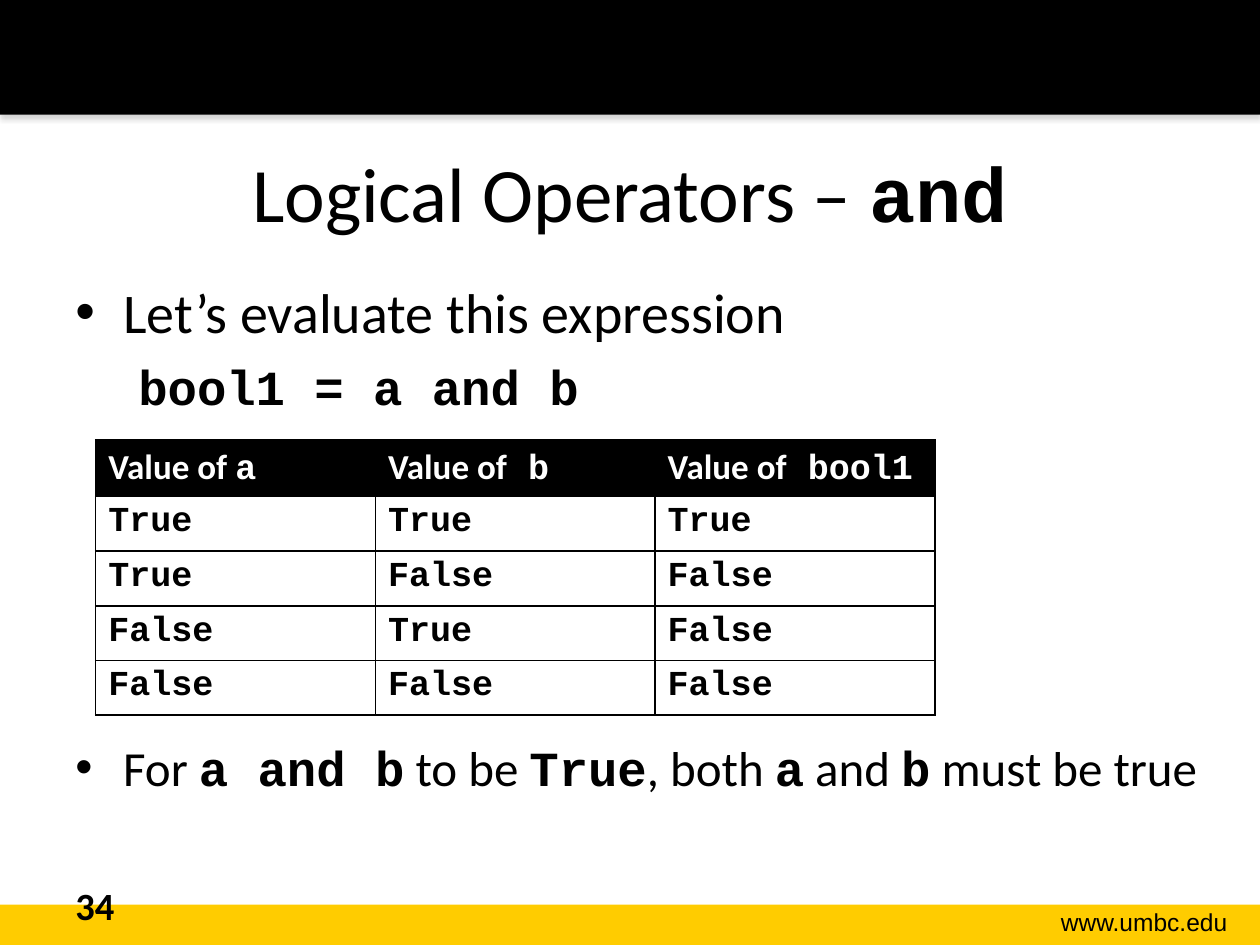
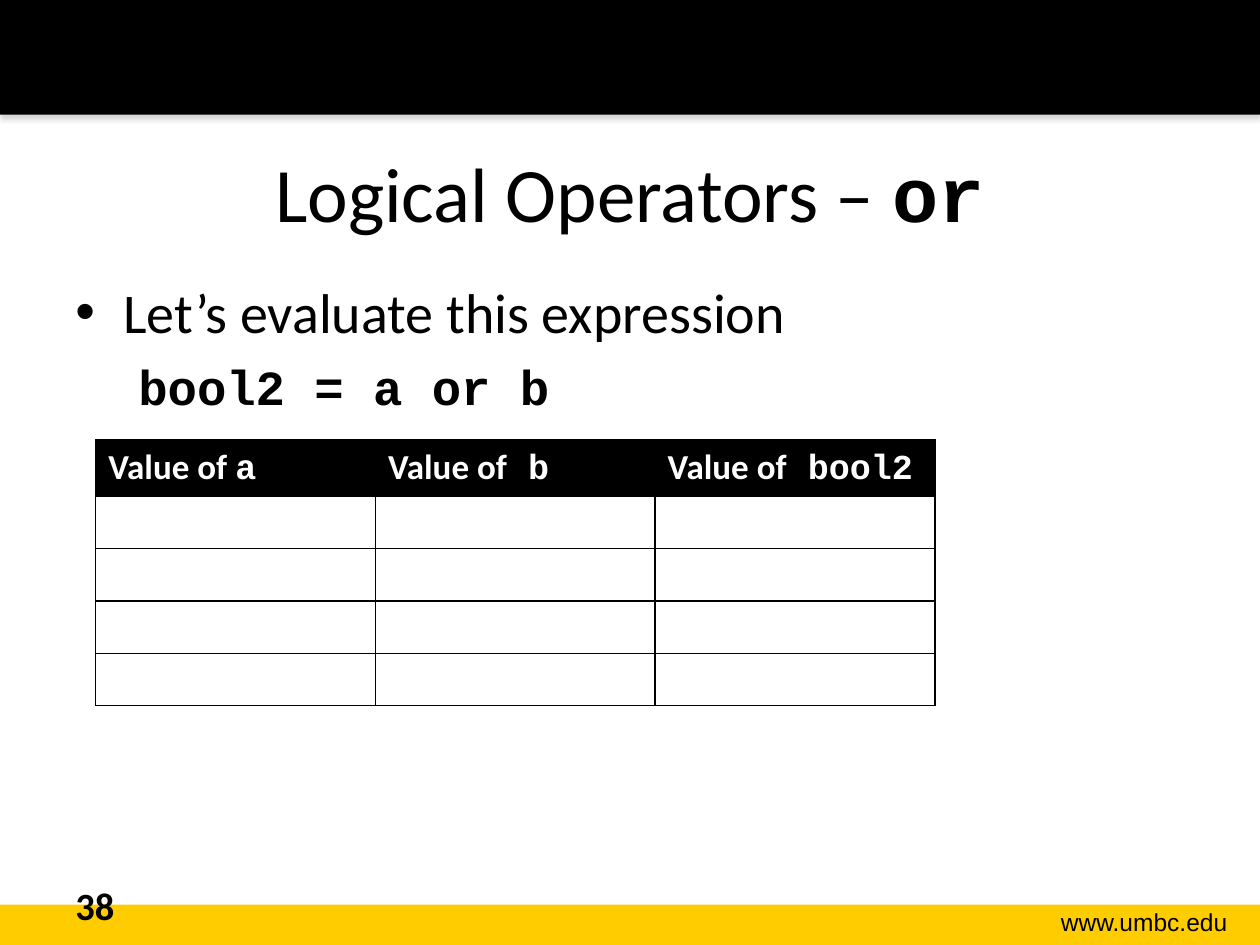
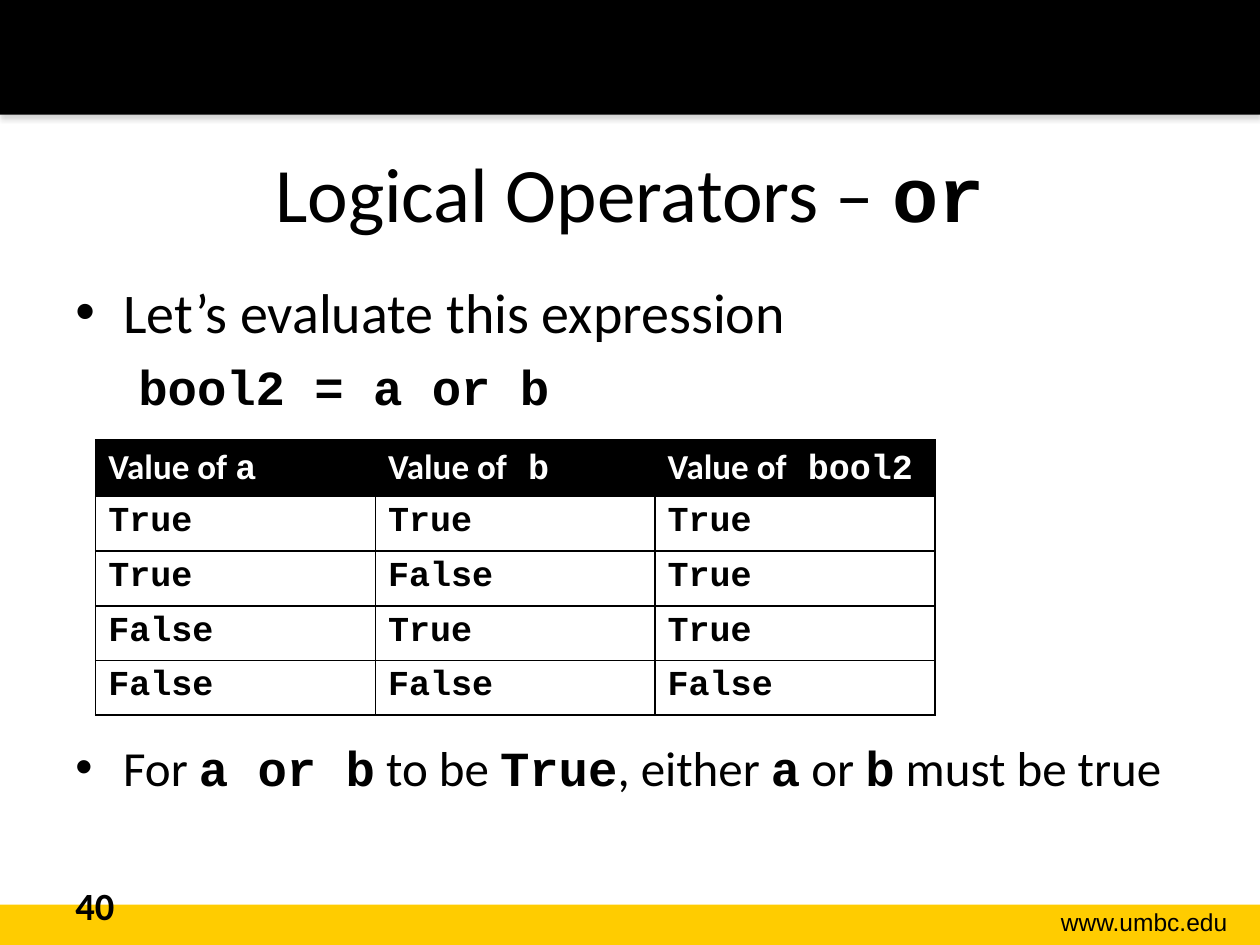
from itertools import product

from lxml import etree
from pptx import Presentation
from pptx import util as u
from pptx.dml.color import RGBColor
from pptx.enum import shapes, text
from pptx.oxml import parse_xml
from pptx.oxml.ns import nsdecls, qn

BLACK = RGBColor(0x00, 0x00, 0x00)
WHITE = RGBColor(0xFF, 0xFF, 0xFF)
GOLD = RGBColor(0xFF, 0xCC, 0x00)
SANS, MONO = "Calibri", "Courier New"
LEFT, RIGHT = text.PP_ALIGN.LEFT, text.PP_ALIGN.RIGHT
W, H = u.Inches(10), u.Inches(7.5)
EDGE = u.Inches(0.5)
COL, HEAD, ROW = u.Inches(2.22), u.Inches(0.45), u.Inches(1.66 / 4)

SHADOW = (
    f'<a:outerShdw {nsdecls("a")} blurRad="{u.Pt(3.1)}" dist="{u.Pt(1.8)}" dir="5400000" rotWithShape="0">'
    '<a:srgbClr val="808080"><a:alpha val="35000"/></a:srgbClr></a:outerShdw>'
)


def write(para, words, size=28, font=SANS, ink=BLACK, bold=False, align=LEFT,
          before=0, indent=0, bullet=False):
    props = para._p.get_or_add_pPr()
    if indent:
        props.set("marL", str(u.Inches(indent)))
    if bullet:
        props.set("indent", str(-u.Inches(indent)))
        etree.SubElement(props, qn("a:buFont")).set("typeface", "Arial")
        etree.SubElement(props, qn("a:buChar")).set("char", "•")
    para.alignment = align
    para.space_before = u.Pt(before)
    for place, part in enumerate(words.split("`")):
        if part:
            code = place % 2 == 1
            run = para.add_run()
            run.text = part
            run.font.name = MONO if code else font
            run.font.size = u.Pt(size)
            run.font.bold = bold or code
            run.font.color.rgb = ink


def box(slide, left, top, width, height):
    frame = slide.shapes.add_textbox(left, top, width, height).text_frame
    frame.word_wrap = True
    return frame


deck = Presentation()
deck.slide_width, deck.slide_height = W, H

pages = [
    ("34", "and", "bool1", ["True", "False", "False", "False"], "both `a` and `b`"),
    ("38", "or", "bool2", None, None),
    ("40", "or", "bool2", ["True", "True", "True", "False"], "either `a` or `b`"),
]

for number, word, name, results, rule in pages:
    slide = deck.slides.add_slide(deck.slide_layouts[5])

    for top, height, tint in [(u.Inches(7.18), u.Inches(0.32), GOLD), (0, u.Inches(0.91), BLACK)]:
        band = slide.shapes.add_shape(shapes.MSO_SHAPE.RECTANGLE, 0, top, W, height)
        band.shadow.inherit = False
        band.fill.solid()
        band.fill.fore_color.rgb = tint
        band.line.fill.background()
    band._element.spPr.find(qn("a:effectLst")).append(parse_xml(SHADOW))

    site = box(slide, u.Inches(7.85), u.Inches(7.15), u.Inches(1.99), u.Inches(0.34))
    write(site.paragraphs[0], "www.umbc.edu", size=14, font="Arial", align=RIGHT)

    title = slide.shapes.title
    title.left, title.top = EDGE, u.Inches(0.9)
    title.width, title.height = W - 2 * EDGE, u.Inches(1.25)
    title.text_frame.vertical_anchor = text.MSO_ANCHOR.MIDDLE
    write(title.text_frame.paragraphs[0], f"Logical Operators – `{word}`", size=44,
          align=text.PP_ALIGN.CENTER)

    body = box(slide, EDGE, u.Inches(2.15), u.Inches(9.2), u.Inches(4.55))
    write(body.paragraphs[0], "Let’s evaluate this expression", size=32, indent=0.38, bullet=True)
    write(body.add_paragraph(), f"`{name} = a {word} b`", before=7, indent=0.5)
    if rule:
        write(body.add_paragraph(), f"For `a {word} b` to be `True`, {rule} must be true",
              before=184, indent=0.38, bullet=True)

    page = box(slide, EDGE, u.Inches(6.95), u.Inches(2.33), u.Inches(0.4))
    write(page.paragraphs[0], number, size=22, bold=True)

    rows = [["Value of `a`", "Value of` b`", f"Value of` {name}`"]]
    for place, pair in enumerate(product(["True", "False"], repeat=2)):
        rows.append([f"`{value}`" for value in (*pair, results[place])] if results else [""] * 3)

    table = slide.shapes.add_table(len(rows), 3, u.Inches(0.76), u.Inches(3.49),
                                   3 * COL, HEAD + 4 * ROW).table
    table.horz_banding = False
    for column in table.columns:
        column.width = COL
    for r, values in enumerate(rows):
        table.rows[r].height = ROW if r else HEAD
        for c, value in enumerate(values):
            cell = table.cell(r, c)
            cell.fill.solid()
            cell.fill.fore_color.rgb = WHITE if r else BLACK
            write(cell.text_frame.paragraphs[0], value, size=20, bold=True,
                  ink=BLACK if r else WHITE)
            for place, side in enumerate("LRTB"):
                cell._tc.get_or_add_tcPr().insert(place, parse_xml(
                    f'<a:ln{side} {nsdecls("a")} w="{u.Pt(1)}"><a:solidFill>'
                    f'<a:srgbClr val="{BLACK}"/></a:solidFill></a:ln{side}>'))

deck.save("out.pptx")
